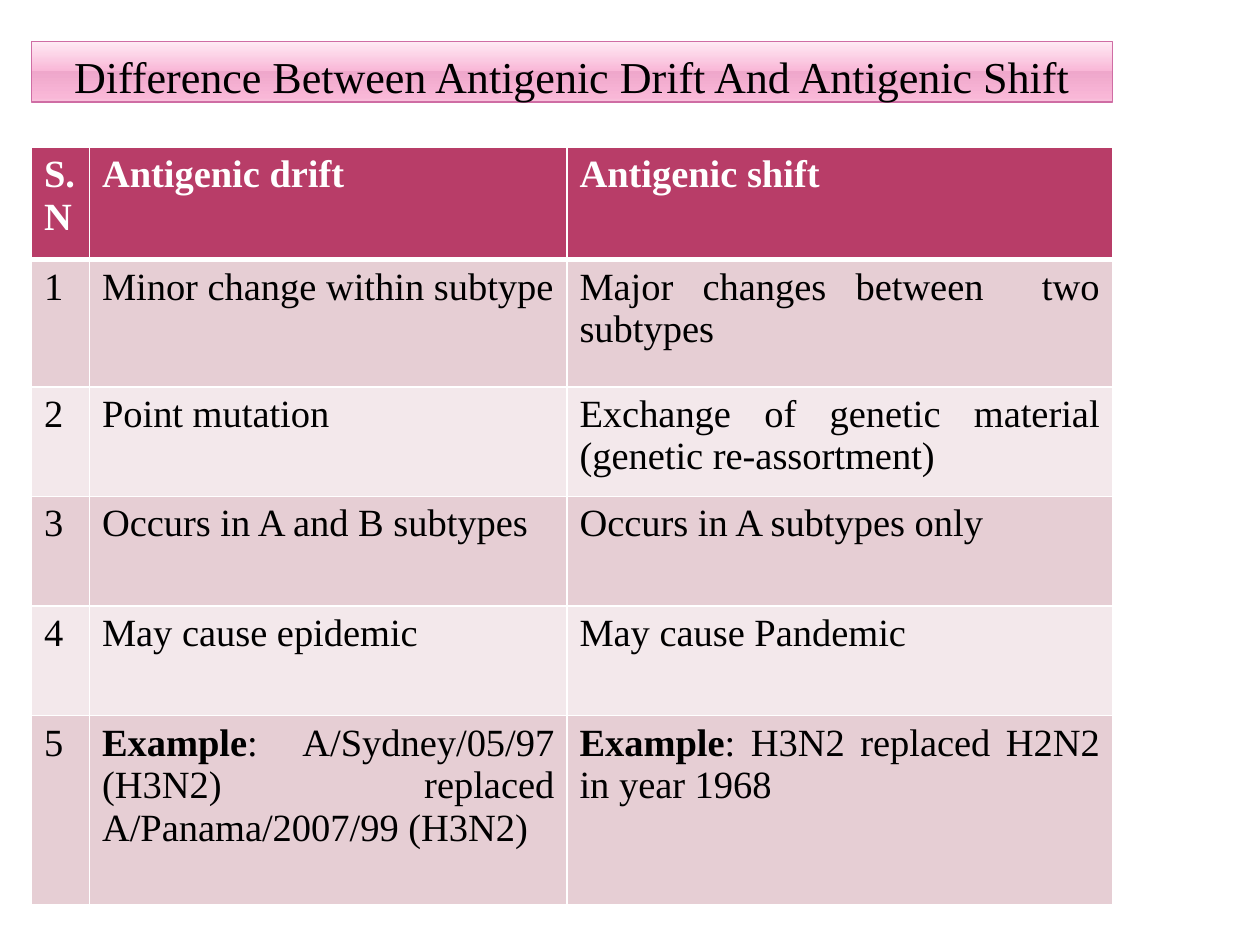
from lxml import etree
from pptx import Presentation, util as u
from pptx.dml.color import RGBColor
from pptx.enum import shapes, text
from pptx.oxml import ns

FONT = "Times New Roman"
BLACK = RGBColor(0x00, 0x00, 0x00)
WHITE = RGBColor(0xFF, 0xFF, 0xFF)
HEADER = RGBColor(0xB8, 0x3D, 0x68)
BANDS = (RGBColor(0xF3, 0xE8, 0xEB), RGBColor(0xE6, 0xCE, 0xD4))
TITLE_LINE = RGBColor(0xCF, 0x6D, 0xA4)
TITLE_STOPS = (
    (0, RGBColor(0xFF, 0xEA, 0xF4)),
    (49, RGBColor(0xF9, 0xB7, 0xD7)),
    (49, RGBColor(0xEF, 0xA7, 0xCB)),
    (92, RGBColor(0xF9, 0xB7, 0xD7)),
    (100, RGBColor(0xF8, 0xC4, 0xDD)),
)

LEFT, WIDTH = 0.25, 8.58
COLUMNS = (0.46, 3.79, 4.33)
ROWS = (0.89, 1.01, 0.87, 0.87, 0.87, 1.5)
CONTENT = (
    ("S.N", "Antigenic drift", "Antigenic shift"),
    ("1", "Minor change within subtype", "Major changes between  two subtypes"),
    ("2", "Point mutation", "Exchange of genetic material (genetic re-assortment)"),
    ("3", "Occurs in A and B subtypes", "Occurs in A subtypes only"),
    ("4", "May cause epidemic", "May cause Pandemic"),
    ("5", ("Example", ": A/Sydney/05/97 (H3N2) replaced A/Panama/2007/99 (H3N2)"),
     ("Example", ": H3N2 replaced H2N2 in year 1968")),
)


def add_run(paragraph, words, size, color, bold=False):
    """Append one formatted run to a paragraph."""
    run = paragraph.add_run()
    run.text = words
    run.font.name = FONT
    run.font.size = u.Pt(size)
    run.font.bold = bold
    run.font.color.rgb = color


def add_color(parent, color):
    """Append a plain RGB colour element."""
    etree.SubElement(parent, ns.qn("a:srgbClr"), val=str(color))


def fill_gradient(shape, stops):
    """Fill a shape from top to bottom with the given colour stops."""
    shape.fill.gradient()
    shape.fill.gradient_angle = 270
    stop_list = shape._element.spPr.find(".//" + ns.qn("a:gsLst"))
    for stop in list(stop_list):
        stop_list.remove(stop)
    for percent, color in stops:
        stop = etree.SubElement(stop_list, ns.qn("a:gs"), pos=str(percent * 1000))
        add_color(stop, color)


def add_title(slide, words):
    """Add the glossy title bar."""
    shape = slide.shapes.add_shape(
        shapes.MSO_SHAPE.RECTANGLE,
        u.Inches(LEFT), u.Inches(0.33), u.Inches(WIDTH), u.Inches(0.48))
    shape.shadow.inherit = False
    fill_gradient(shape, TITLE_STOPS)
    shape.line.color.rgb = TITLE_LINE
    shape.line.width = u.Pt(0.9)
    frame = shape.text_frame
    frame.word_wrap = True
    frame.vertical_anchor = text.MSO_ANCHOR.BOTTOM
    frame.margin_left = frame.margin_right = u.Inches(0.05)
    frame.margin_top = frame.margin_bottom = 0
    paragraph = frame.paragraphs[0]
    paragraph.alignment = text.PP_ALIGN.CENTER
    add_run(paragraph, words, 25.2, BLACK)


def set_borders(cell, widths):
    """Give a cell white borders with a width in points for each side."""
    properties = cell._tc.get_or_add_tcPr()
    for index, (side, width) in enumerate(widths.items()):
        line = etree.Element(ns.qn(f"a:ln{side}"), w=str(u.Pt(width)))
        add_color(etree.SubElement(line, ns.qn("a:solidFill")), WHITE)
        properties.insert(index, line)


def fill_cell(cell, content, row):
    """Write and format one table cell."""
    is_header = row == 0
    cell.fill.solid()
    cell.fill.fore_color.rgb = HEADER if is_header else BANDS[row % 2]
    set_borders(cell, {"L": 1, "R": 1, "T": 3 if row == 1 else 1,
                       "B": 3 if is_header else 1})
    paragraph = cell.text_frame.paragraphs[0]
    paragraph.alignment = text.PP_ALIGN.JUSTIFY
    lead, rest = ("", content) if isinstance(content, str) else content
    color = WHITE if is_header else BLACK
    if lead:
        add_run(paragraph, lead, 22, color, bold=True)
    add_run(paragraph, rest, 22, color, bold=is_header)


def add_comparison(slide):
    """Add the table that compares drift with shift."""
    table = slide.shapes.add_table(
        len(ROWS), len(COLUMNS), u.Inches(LEFT), u.Inches(1.17),
        u.Inches(WIDTH), u.Inches(sum(ROWS))).table
    for column, width in zip(table.columns, COLUMNS):
        column.width = u.Inches(width)
    for index, (row, height) in enumerate(zip(table.rows, ROWS)):
        row.height = u.Inches(height)
        for cell, content in zip(row.cells, CONTENT[index]):
            fill_cell(cell, content, index)


def main():
    """Build and save the slide."""
    presentation = Presentation()
    presentation.slide_width = u.Inches(10)
    presentation.slide_height = u.Inches(7.5)
    slide = presentation.slides.add_slide(presentation.slide_layouts[6])
    add_title(slide, "Difference Between Antigenic Drift And Antigenic Shift")
    add_comparison(slide)
    presentation.save("out.pptx")


if __name__ == "__main__":
    main()
